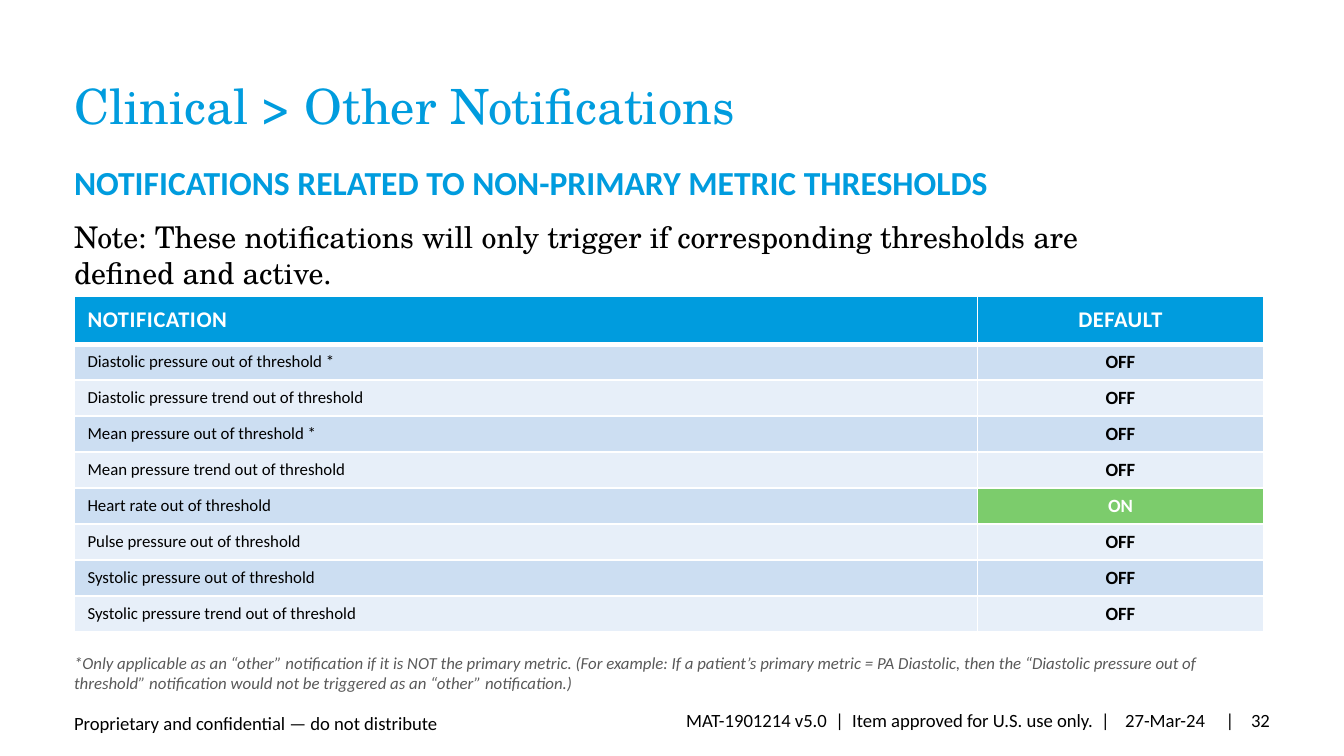
from dataclasses import dataclass

from lxml import etree
from pptx import Presentation
from pptx.dml.color import RGBColor
from pptx.enum import text
from pptx.oxml import ns
from pptx.util import Cm, Pt

LEFT, CENTER, RIGHT = text.PP_ALIGN.LEFT, text.PP_ALIGN.CENTER, text.PP_ALIGN.RIGHT
TOP, MIDDLE, BOTTOM = text.MSO_ANCHOR.TOP, text.MSO_ANCHOR.MIDDLE, text.MSO_ANCHOR.BOTTOM


@dataclass(frozen=True)
class Theme:
    serif: str = "TeX Gyre Schola"
    sans: str = "Calibri"
    accent: str = "009CDE"
    ink: str = "000000"
    muted: str = "595959"
    white: str = "FFFFFF"
    bands: tuple = ("CCDEF2", "E7EFF9")
    on: str = "7CCC6C"
    title: int = 26
    note: int = 16
    heading: int = 18
    header: int = 12
    footer: int = 10
    small: int = 9


class SlideBuilder:
    def __init__(self, slide, theme):
        self.slide = slide
        self.theme = theme

    def style(self, p, size, color=None, font=None, bold=False, italic=False, align=LEFT):
        p.alignment = align
        f = p.font
        f.name, f.size, f.bold, f.italic = font or self.theme.sans, Pt(size), bold, italic
        f.color.rgb = RGBColor.from_string(color or self.theme.ink)

    def text(self, box, words, size, anchor=TOP, insets=(0, 0, 0.25, 0.13),
             before=0, after=0, line=None, **style):
        """Add one paragraph; box and insets are in centimetres."""
        tf = self.slide.shapes.add_textbox(*map(Cm, box)).text_frame
        tf.word_wrap = True
        tf.vertical_anchor = anchor
        tf.margin_left, tf.margin_top, tf.margin_right, tf.margin_bottom = map(Cm, insets)
        p = tf.paragraphs[0]
        p.text = words
        p.space_before, p.space_after = Pt(before), Pt(after)
        if line:
            p.line_spacing = line
        self.style(p, size, **style)

    def borders(self, cell, top=1, bottom=1):
        tc_pr = cell._tc.get_or_add_tcPr()
        for side, width in (("L", 1), ("R", 1), ("T", top), ("B", bottom)):
            ln = etree.SubElement(tc_pr, ns.qn(f"a:ln{side}"), w=str(Pt(width)))
            fill = etree.SubElement(ln, ns.qn("a:solidFill"))
            etree.SubElement(fill, ns.qn("a:srgbClr"), val=self.theme.white)

    def cell(self, cell, words, fill, size, top=1, bottom=1, spacing=None, **style):
        """Fill one table cell; spacing is the tracking in points."""
        self.borders(cell, top, bottom)
        cell.fill.solid()
        cell.fill.fore_color.rgb = RGBColor.from_string(fill)
        cell.vertical_anchor = MIDDLE
        p = cell.text_frame.paragraphs[0]
        r = p.add_run()
        r.text = words
        self.style(p, size, **style)
        if spacing:
            r.font._element.set("spc", str(int(spacing * 100)))

    def table(self, left, top, widths, header_height, row_height, header, rows):
        t = self.theme
        height = header_height + row_height * len(rows)
        table = self.slide.shapes.add_table(
            len(rows) + 1, len(widths), Cm(left), Cm(top), Cm(sum(widths)), Cm(height)).table
        for column, width in zip(table.columns, widths):
            column.width = Cm(width)
        for i, row in enumerate(table.rows):
            row.height = Cm(row_height if i else header_height)

        for i, (words, align) in enumerate(zip(header, (LEFT, CENTER))):
            cell = table.cell(0, i)
            cell.margin_top = cell.margin_bottom = Cm(0.1)
            self.cell(cell, words, t.accent, t.header, bottom=3, spacing=0.3,
                      color=t.white, bold=True, align=align)
        for i, (name, default) in enumerate(rows, 1):
            band = t.bands[(i - 1) % 2]
            rule = 3 if i == 1 else 1
            is_on = default == "ON"
            self.cell(table.cell(i, 0), name, band, t.small, top=rule)
            self.cell(table.cell(i, 1), default, t.on if is_on else band, t.footer, top=rule,
                      color=t.white if is_on else t.ink, bold=True, align=CENTER)


NOTIFICATIONS = [
    ("Diastolic pressure out of threshold *", "OFF"),
    ("Diastolic pressure trend out of threshold", "OFF"),
    ("Mean pressure out of threshold *", "OFF"),
    ("Mean pressure trend out of threshold", "OFF"),
    ("Heart rate out of threshold", "ON"),
    ("Pulse pressure out of threshold", "OFF"),
    ("Systolic pressure out of threshold", "OFF"),
    ("Systolic pressure trend out of threshold", "OFF"),
]
FOOTNOTE = (
    "*Only applicable as an “other” notification if it is NOT the primary metric. "
    "(For example: If a patient’s primary metric = PA Diastolic, then the “Diastolic pressure "
    "out of threshold” notification would not be triggered as an “other” notification.)")


def main():
    prs = Presentation()
    prs.slide_width, prs.slide_height = Cm(25.4), Cm(14.28)
    t = Theme()
    b = SlideBuilder(prs.slides.add_slide(prs.slide_layouts[6]), t)
    left = 1.4

    b.text((left, 4.14, 21.29, 8.81), "Note: These notifications will only trigger if "
           "corresponding thresholds are defined and active.", t.note, before=6, font=t.serif)
    b.text((left, 3.05, 22.63, 1.09), "NOTIFICATIONS RELATED TO NON-PRIMARY METRIC THRESHOLDS",
           t.heading, before=6, after=12, color=t.accent, bold=True)
    b.text((left, 1.57, 22.61, 1.09), "Clinical > Other Notifications", t.title,
           line=0.9, color=t.accent, font=t.serif)

    b.table(left, 5.59, (17.07, 5.41), 0.91, 0.68, ("NOTIFICATION", "DEFAULT"), NOTIFICATIONS)
    b.text((left, 12.32, 22.48, 0.76), FOOTNOTE, t.small, insets=(0, 0, 0, 0),
           before=12, color=t.muted, italic=True)

    b.text((left, 13.39, 8.48, 0.61), "Proprietary and confidential — do not distribute",
           t.footer, BOTTOM, insets=(0, 0.13, 0, 0.13), before=2)
    for x, width, words, pad_left, pad_right, align in (
            (10.13, 10.92, "MAT-1901214 v5.0  |  Item approved for U.S. use only.  | ",
             0.25, 0, RIGHT),
            (20.93, 2.18, "27-Mar-24", 0.25, 0.25, CENTER),
            (22.68, 1.57, "|    32", 0, 0.25, RIGHT)):
        b.text((x, 13.23, width, 0.76), words, t.footer, MIDDLE,
               insets=(pad_left, 0.13, pad_right, 0.13), align=align)

    prs.save("out.pptx")


if __name__ == "__main__":
    main()
